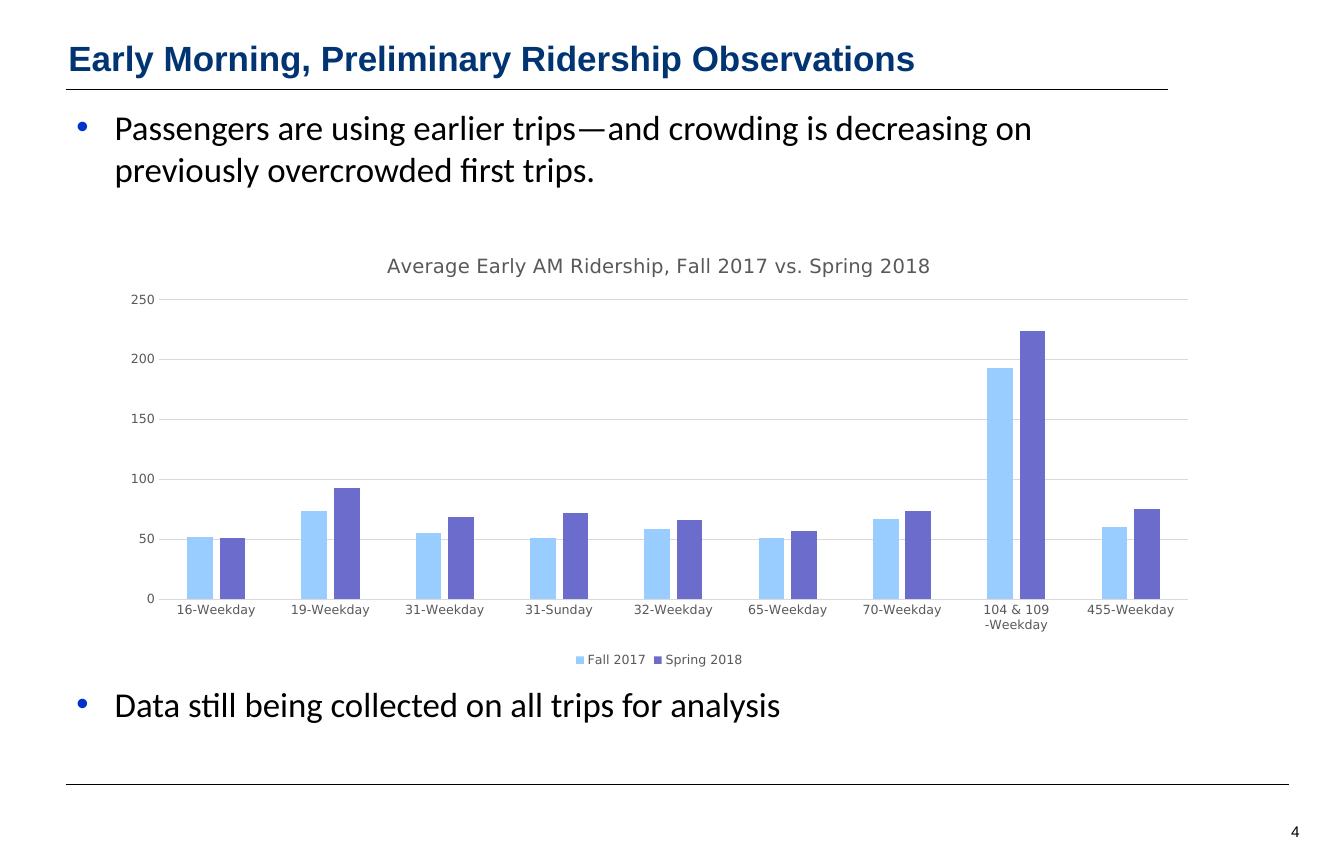
from lxml import etree
from pptx import Presentation
from pptx.chart.data import CategoryChartData
from pptx.dml.color import RGBColor
from pptx.enum.chart import XL_CHART_TYPE, XL_LEGEND_POSITION, XL_TICK_MARK
from pptx.enum.shapes import MSO_CONNECTOR, MSO_SHAPE
from pptx.enum.text import MSO_ANCHOR, PP_ALIGN
from pptx.oxml.ns import qn
from pptx.util import Inches, Pt

CLUSTERED = XL_CHART_TYPE.COLUMN_CLUSTERED
BOTTOM = XL_LEGEND_POSITION.BOTTOM
NO_TICK = XL_TICK_MARK.NONE
STRAIGHT = MSO_CONNECTOR.STRAIGHT
RECTANGLE = MSO_SHAPE.RECTANGLE
TOP, MIDDLE = MSO_ANCHOR.TOP, MSO_ANCHOR.MIDDLE
LEFT, RIGHT = PP_ALIGN.LEFT, PP_ALIGN.RIGHT

COLORS = {
    "white": "FFFFFF",
    "black": "000000",
    "title": "003472",
    "bullet": "0033CC",
    "label": "595959",
    "grid": "D9D9D9",
    "fall": "99CCFF",
    "spring": "6C6CCC",
}

ROUTES = ["16-Weekday", "19-Weekday", "31-Weekday", "31-Sunday", "32-Weekday",
          "65-Weekday", "70-Weekday", "104 & 109 -Weekday", "455-Weekday"]
RIDERSHIP = [
    ("Fall 2017", "fall", [52, 74, 55, 51, 59, 51, 67, 193, 60]),
    ("Spring 2018", "spring", [51, 93, 69, 72, 66, 57, 74, 224, 75]),
]
BULLETS = [
    (1, 0.95, "Passengers are using earlier trips—and crowding is decreasing "
              "on previously overcrowded first trips."),
    (6.72, 0.55, "Data still being collected on all trips for analysis"),
]


def color(name):
    return RGBColor.from_string(COLORS[name])


def set_font(font, color_name, **values):
    for name, value in values.items():
        setattr(font, name, value)
    font.color.rgb = color(color_name)


def set_line(line, color_name, width):
    line.color.rgb = color(color_name)
    line.width = Pt(width)


def fill_text(shape, text, anchor=TOP, alignment=LEFT):
    frame = shape.text_frame
    frame.word_wrap = True
    frame.vertical_anchor = anchor
    paragraph = frame.paragraphs[0]
    paragraph.text = text
    paragraph.alignment = alignment
    return paragraph


def add_rule(slide, right, y, width):
    rule = slide.shapes.add_connector(
        STRAIGHT, Inches(0.65), Inches(y), Inches(right), Inches(y))
    set_line(rule.line, "black", width)
    etree.SubElement(rule._element.spPr, qn("a:effectLst"))


def add_title(slide, text):
    shape = slide.shapes.add_shape(
        RECTANGLE, Inches(0.58), Inches(0.36), Inches(10.92), Inches(0.48))
    shape.shadow.inherit = False
    shape.fill.solid()
    shape.fill.fore_color.rgb = color("white")
    shape.line.fill.background()
    paragraph = fill_text(shape, text)
    paragraph.line_spacing = 0.9
    set_font(paragraph.runs[0].font, "title", name="Arial", size=Pt(25), bold=True)


def add_bullet(slide, top, height, text):
    box = slide.shapes.add_textbox(
        Inches(0.66), Inches(top), Inches(11), Inches(height))
    paragraph = fill_text(box, text)
    properties = paragraph._p.get_or_add_pPr()
    properties.set("marL", str(Inches(0.38)))
    properties.set("indent", str(-Inches(0.38)))
    bullet_color = etree.SubElement(properties, qn("a:buClr"))
    etree.SubElement(bullet_color, qn("a:srgbClr"), val=COLORS["bullet"])
    etree.SubElement(properties, qn("a:buFont"), typeface="Arial")
    etree.SubElement(properties, qn("a:buChar"), char="•")
    set_font(paragraph.runs[0].font, "black", name="Calibri", size=Pt(24.9))


def add_page_number(slide, number):
    box = slide.shapes.add_textbox(
        Inches(11.88), Inches(8.11), Inches(1.11), Inches(0.28))
    paragraph = fill_text(box, number, MIDDLE, RIGHT)
    set_font(paragraph.runs[0].font, "black", name="Arial", size=Pt(11))


def style_axes(chart):
    for axis in (chart.category_axis, chart.value_axis):
        axis.major_tick_mark = NO_TICK
        axis.minor_tick_mark = NO_TICK
        set_font(axis.tick_labels.font, "label", name="DejaVu Sans", size=Pt(9))
    set_line(chart.category_axis.format.line, "grid", 0.75)
    value_axis = chart.value_axis
    value_axis.minimum_scale = 0
    value_axis.maximum_scale = 250
    value_axis.major_unit = 50
    value_axis.tick_labels.number_format = "0"
    value_axis.tick_labels.number_format_is_linked = False
    value_axis.format.line.fill.background()
    set_line(value_axis.major_gridlines.format.line, "grid", 0.75)


def add_ridership_chart(slide, title):
    data = CategoryChartData()
    data.categories = ROUTES
    for name, _, values in RIDERSHIP:
        data.add_series(name, values)
    chart = slide.shapes.add_chart(
        CLUSTERED, Inches(1.08), Inches(2.33), Inches(10.92), Inches(4.33), data).chart
    set_font(chart.font, "black", name="DejaVu Sans", size=Pt(10))
    chart.has_title = True
    paragraph = chart.chart_title.text_frame.paragraphs[0]
    paragraph.text = title
    set_font(paragraph.runs[0].font, "label",
             name="DejaVu Sans", size=Pt(14), bold=False)
    chart.chart_title.include_in_layout = False
    chart.has_legend = True
    chart.legend.position = BOTTOM
    chart.legend.include_in_layout = False
    set_font(chart.legend.font, "label", name="DejaVu Sans", size=Pt(9))
    style_axes(chart)
    plot = chart.plots[0]
    plot.gap_width = 219
    plot.overlap = -27
    plot.vary_by_categories = False
    for series, (_, color_name, _) in zip(plot.series, RIDERSHIP):
        series.format.fill.solid()
        series.format.fill.fore_color.rgb = color(color_name)


def main():
    presentation = Presentation()
    presentation.slide_width = Inches(13.33)
    presentation.slide_height = Inches(8.5)
    slide = presentation.slides.add_slide(presentation.slide_layouts[6])
    add_rule(slide, 11.58, 0.89, 1)
    add_rule(slide, 12.78, 7.78, 0.75)
    add_page_number(slide, "4")
    for top, height, text in BULLETS:
        add_bullet(slide, top, height, text)
    add_title(slide, "Early Morning, Preliminary Ridership Observations")
    add_ridership_chart(slide, "Average Early AM Ridership, Fall 2017 vs. Spring 2018")
    presentation.save("out.pptx")


if __name__ == "__main__":
    main()
